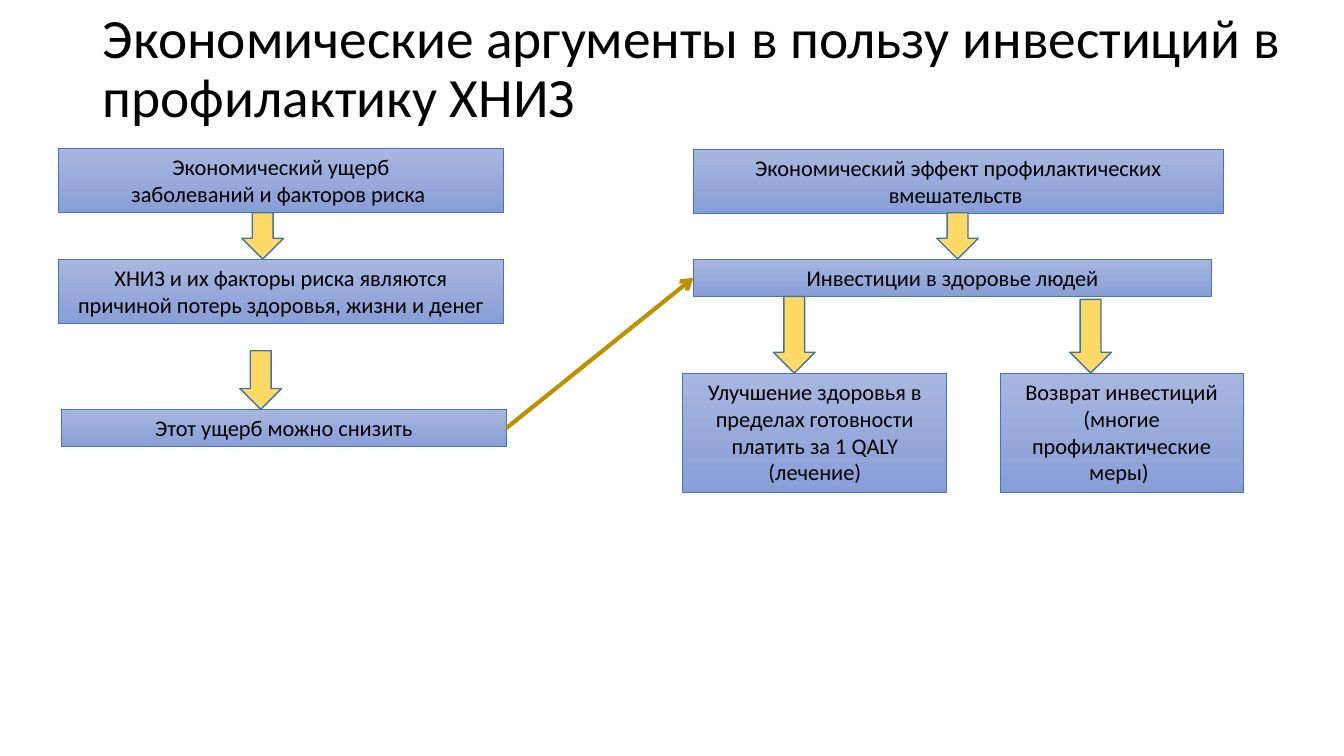
from lxml.etree import SubElement
from pptx import Presentation
from pptx.dml.color import RGBColor
from pptx.enum.shapes import MSO_CONNECTOR as Connector, MSO_SHAPE as Shape
from pptx.enum.text import MSO_ANCHOR as Anchor, MSO_AUTO_SIZE as AutoSize, PP_ALIGN as Align
from pptx.oxml.ns import qn
from pptx.util import Inches, Pt

SLIDE_WIDTH, SLIDE_HEIGHT = Inches(13.33), Inches(7.5)
FONT = "Calibri"
LEFT_COLUMN, LEFT_WIDTH = 4.35, 33.1
RIGHT_COLUMN = 51.6
TOP_ROW, MIDDLE_ROW, OUTCOME_ROW, REDUCTION_ROW = 19.6, 34.27, 49.35, 54.15
ONE_LINE, TWO_LINES, FOUR_LINES = 4.95, 8.55, 15.75
ARROW_WIDTH = 3.1
RIGHT_SIDE, LEFT_SIDE = 3, 1


def color(value):
    """Turn a hex string into a colour."""
    return RGBColor.from_string(value)


def area(left, top, width, height):
    """Convert percentages of the slide's size to lengths."""
    return (int(SLIDE_WIDTH * left / 100), int(SLIDE_HEIGHT * top / 100),
            int(SLIDE_WIDTH * width / 100), int(SLIDE_HEIGHT * height / 100))


def write(paragraph, text, size, align):
    """Add one formatted run to a paragraph."""
    paragraph.alignment = align
    run = paragraph.add_run()
    run.text = text
    run.font.name = FONT
    run.font.size = Pt(size)
    run.font.color.rgb = color("000000")


def set_title(slide, text):
    """Place and fill the title placeholder."""
    title = slide.shapes.title
    title.left, title.top, title.width, title.height = area(6.9, 2.8, 89.6, 12.93)
    frame = title.text_frame
    frame.word_wrap = True
    frame.auto_size = AutoSize.NONE
    frame.vertical_anchor = Anchor.MIDDLE
    frame.paragraphs[0].line_spacing = 0.9
    write(frame.paragraphs[0], text, 39.6, Align.LEFT)


def add_outlined(slide, kind, place, line_color, line_width):
    """Add a preset shape with an outline and no shadow."""
    shape = slide.shapes.add_shape(kind, *area(*place))
    shape.shadow.inherit = False
    shape.line.color.rgb = color(line_color)
    shape.line.width = Pt(line_width)
    return shape


def add_box(slide, place, *lines):
    """Add a gradient box with centred paragraphs."""
    box = add_outlined(slide, Shape.RECTANGLE, place, "4472C4", 0.5)
    box.fill.gradient()
    box.fill.gradient_angle = 270
    for stop, value in zip(box.fill.gradient_stops, ("A8B7DF", "889ED7")):
        stop.color.rgb = color(value)
    frame = box.text_frame
    frame.word_wrap = True
    frame.vertical_anchor = Anchor.TOP
    for index, line in enumerate(lines):
        paragraph = frame.add_paragraph() if index else frame.paragraphs[0]
        write(paragraph, line, 16, Align.CENTER)
    return box


def add_down_arrow(slide, center, top, bottom):
    """Add a yellow block arrow between two heights."""
    place = (center - ARROW_WIDTH / 2, top, ARROW_WIDTH, bottom - top)
    arrow = add_outlined(slide, Shape.DOWN_ARROW, place, "43739E", 1)
    arrow.fill.solid()
    arrow.fill.fore_color.rgb = color("FFD966")


def add_link(slide, source, target):
    """Join the right side of one box to the left side of another."""
    link = slide.shapes.add_connector(Connector.STRAIGHT, 0, 0, 0, 0)
    link.begin_connect(source, RIGHT_SIDE)
    link.end_connect(target, LEFT_SIDE)
    link.line.color.rgb = color("BF9000")
    link.line.width = Pt(3)
    SubElement(link.line._get_or_add_ln(), qn("a:tailEnd"), type="arrow")
    SubElement(link._element.spPr, qn("a:effectLst"))


def main():
    """Build and save the slide."""
    presentation = Presentation()
    presentation.slide_width, presentation.slide_height = SLIDE_WIDTH, SLIDE_HEIGHT
    slide = presentation.slides.add_slide(presentation.slide_layouts[5])
    set_title(slide, "Экономические аргументы в пользу инвестиций в профилактику ХНИЗ")

    add_box(slide, (LEFT_COLUMN, TOP_ROW, LEFT_WIDTH, TWO_LINES),
            "Экономический ущерб", "заболеваний и факторов риска ")
    add_box(slide, (RIGHT_COLUMN, TOP_ROW + 0.1, 39.4, TWO_LINES),
            "Экономический эффект профилактических вмешательств ")
    add_box(slide, (LEFT_COLUMN, MIDDLE_ROW, LEFT_WIDTH, TWO_LINES),
            "ХНИЗ и их факторы риска являются причиной потерь здоровья, жизни и денег")
    reduction = add_box(slide, (LEFT_COLUMN + 0.23, REDUCTION_ROW, LEFT_WIDTH, ONE_LINE),
                        "Этот ущерб можно снизить")
    investment = add_box(slide, (RIGHT_COLUMN, MIDDLE_ROW, 38.55, ONE_LINE),
                         "Инвестиции в здоровье людей")
    add_box(slide, (50.8, OUTCOME_ROW, 19.65, FOUR_LINES),
            "Улучшение здоровья в пределах готовности платить за 1 QALY", "(лечение)")
    add_box(slide, (74.4, OUTCOME_ROW, 18.1, FOUR_LINES),
            "Возврат инвестиций", "(многие профилактические меры) ")

    for center, top, bottom in (
        (19.55, TOP_ROW + TWO_LINES, MIDDLE_ROW),
        (19.4, 46.4, REDUCTION_ROW),
        (71.25, TOP_ROW + TWO_LINES, MIDDLE_ROW),
        (59.1, MIDDLE_ROW + ONE_LINE, OUTCOME_ROW),
        (81.15, 39.6, OUTCOME_ROW),
    ):
        add_down_arrow(slide, center, top, bottom)
    add_link(slide, reduction, investment)
    presentation.save("out.pptx")


if __name__ == "__main__":
    main()
